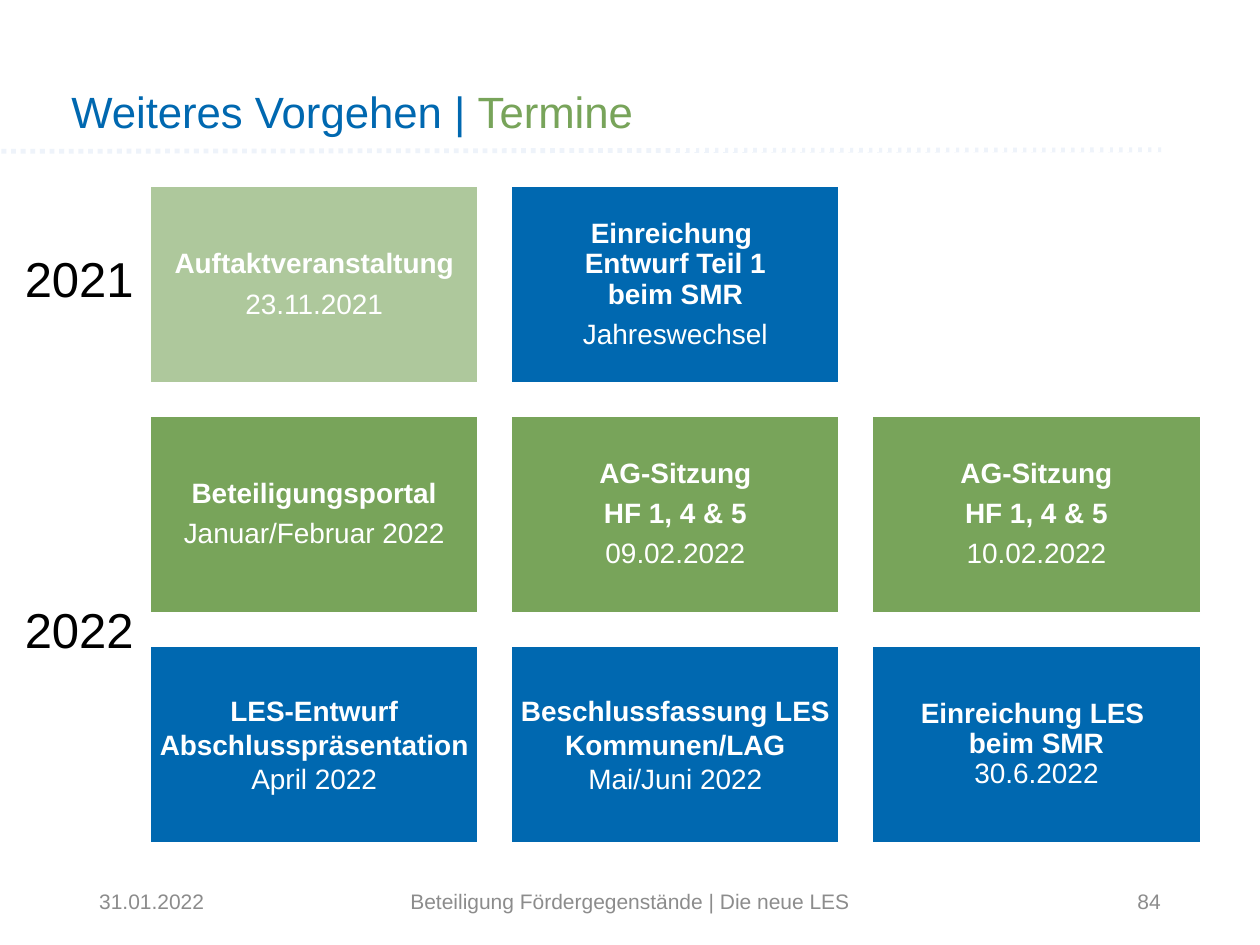
from copy import deepcopy
from dataclasses import dataclass

from lxml import etree
from pptx import Presentation
from pptx import util as u
from pptx.dml.color import RGBColor
from pptx.enum import dml, shapes, text
from pptx.oxml.ns import qn


@dataclass(frozen=True)
class Theme:
    font: str = "Arial"
    blue: str = "0068B0"
    green: str = "78A45A"
    rule: str = "ADC3E6"
    white: str = "FFFFFF"
    black: str = "000000"
    grey: str = "8C8C8C"
    title: float = 25
    year: float = 28
    card: float = 16
    footer: float = 12


T = Theme()
LEFT, CENTER, RIGHT = text.PP_ALIGN.LEFT, text.PP_ALIGN.CENTER, text.PP_ALIGN.RIGHT
TOP, MIDDLE = text.MSO_ANCHOR.TOP, text.MSO_ANCHOR.MIDDLE

# Card grid in cm
GRID_X, GRID_Y = 3.03, 3.76
STEP_X, STEP_Y = 7.28, 4.63
CARD_W, CARD_H = 6.61, 3.97

# Column, row, fill, opacity, spacing, paragraphs of (text, bold) runs
TIGHT = dict(spacing=0.9, after=5.6)
PLAIN = dict()
CARDS = [
    (0, 0, T.green, 60, TIGHT,
     [[("Auftaktveranstaltung", True)], [("23.11.2021", False)]]),
    (1, 0, T.blue, 100, TIGHT,
     [[("Einreichung \nEntwurf Teil 1\nbeim SMR", True)], [("Jahreswechsel", False)]]),
    (0, 1, T.green, 100, TIGHT,
     [[("Beteiligungsportal", True)], [("Januar/Februar 2022", False)]]),
    (1, 1, T.green, 100, TIGHT,
     [[("AG-Sitzung", True)], [("HF 1, 4 & 5", True)], [("09.02.2022", False)]]),
    (2, 1, T.green, 100, TIGHT,
     [[("AG-Sitzung", True)], [("HF 1, 4 & 5", True)], [("10.02.2022", False)]]),
    (0, 2, T.blue, 100, PLAIN,
     [[("LES-Entwurf", True)], [("Abschlusspräsentation", True)], [("April 2022", False)]]),
    (1, 2, T.blue, 100, PLAIN,
     [[("Beschlussfassung LES\nKommunen/LAG\n", True), ("Mai/Juni 2022", False)]]),
    (2, 2, T.blue, 100, TIGHT,
     [[("Einreichung LES \nbeim SMR\n", True), ("30.6.2022", False)]]),
]


def write(p, words, *, size, color, bold=False, align=LEFT, spacing=None,
          before=None, after=None):
    """Add formatted text to a paragraph; newlines become line breaks."""
    p.alignment = align
    if spacing:
        p.line_spacing = spacing
    if before:
        p.space_before = u.Pt(before)
    if after:
        p.space_after = u.Pt(after)
    props = None
    for i, line in enumerate(words.split("\n")):
        if i:
            # The break takes the size of the text around it
            p.add_line_break()
            p._p.findall(qn("a:br"))[-1].append(deepcopy(props))
        if line:
            r = p.add_run()
            r.text = line
            r.font.name, r.font.size, r.font.bold = T.font, u.Pt(size), bold
            r.font.color.rgb = RGBColor.from_string(color)
            props = r._r.rPr


def set_opacity(sp, percent):
    color = sp._element.spPr.find(".//" + qn("a:srgbClr"))
    etree.SubElement(color, qn("a:alpha")).set("val", str(percent * 1000))


def add_rule(s, x1, y1, x2, y2, color, opacity=100):
    line = s.shapes.add_connector(shapes.MSO_CONNECTOR.STRAIGHT,
                                  u.Cm(x1), u.Cm(y1), u.Cm(x2), u.Cm(y2))
    line.line.color.rgb = RGBColor.from_string(color)
    line.line.width = u.Pt(2.75)
    line.line.dash_style = dml.MSO_LINE.ROUND_DOT
    etree.SubElement(line._element.spPr, qn("a:effectLst"))
    if opacity < 100:
        set_opacity(line, opacity)


def add_label(s, x, y, w, h, runs, anchor=MIDDLE, **fmt):
    """Add a one-paragraph text box from (text, color) runs."""
    tf = s.shapes.add_textbox(u.Cm(x), u.Cm(y), u.Cm(w), u.Cm(h)).text_frame
    tf.word_wrap = True
    tf.vertical_anchor = anchor
    for words, color in runs:
        write(tf.paragraphs[0], words, color=color, **fmt)


def add_card(s, col, row, fill, opacity, spacing, paragraphs):
    sp = s.shapes.add_shape(shapes.MSO_SHAPE.RECTANGLE,
                            u.Cm(GRID_X + col * STEP_X), u.Cm(GRID_Y + row * STEP_Y),
                            u.Cm(CARD_W), u.Cm(CARD_H))
    sp.shadow.inherit = False
    sp.fill.solid()
    sp.fill.fore_color.rgb = RGBColor.from_string(fill)
    if opacity < 100:
        set_opacity(sp, opacity)
    sp.line.color.rgb = RGBColor.from_string(T.white)
    sp.line.width = u.Pt(1)
    tf = sp.text_frame
    tf.word_wrap = True
    tf.vertical_anchor = MIDDLE
    tf.margin_left = tf.margin_right = tf.margin_top = tf.margin_bottom = u.Cm(0.18)
    for i, runs in enumerate(paragraphs):
        p = tf.add_paragraph() if i else tf.paragraphs[0]
        for words, bold in runs:
            write(p, words, size=T.card, color=T.white, bold=bold,
                  align=CENTER, **spacing)


def main():
    prs = Presentation()
    prs.slide_width, prs.slide_height = u.Cm(25.4), u.Cm(19.05)
    s = prs.slides.add_slide(prs.slide_layouts[6])

    # Dotted rule under the title
    add_rule(s, 0.03, 3.05, 23.44, 3.02, T.rule, opacity=20)
    add_rule(s, 13.54, 3.02, 24.08, 3.02, T.white)

    # Footer
    for x, w, words, align in [
        (1.75, 5.72, "31.01.2022", LEFT),
        (7.65, 10.11, "Beteiligung Fördergegenstände | Die neue LES", CENTER),
        (17.93, 5.72, "84", RIGHT),
    ]:
        add_label(s, x, 17.65, w, 1.02, [(words, T.grey)], size=T.footer, align=align)

    # Title
    add_label(s, 1.19, 1.42, 23.01, 1.65,
              [("Weiteres Vorgehen | ", T.blue), ("Termine", T.green)],
              size=T.title, after=12)

    # Schedule
    for card in CARDS:
        add_card(s, *card)
    for year, y in [("2021", 5.11), ("2022", 12.19)]:
        add_label(s, 0.25, y, 2.79, 1.3, [(year, T.black)], anchor=TOP,
                  size=T.year, spacing=0.8)

    prs.save("out.pptx")


if __name__ == "__main__":
    main()
